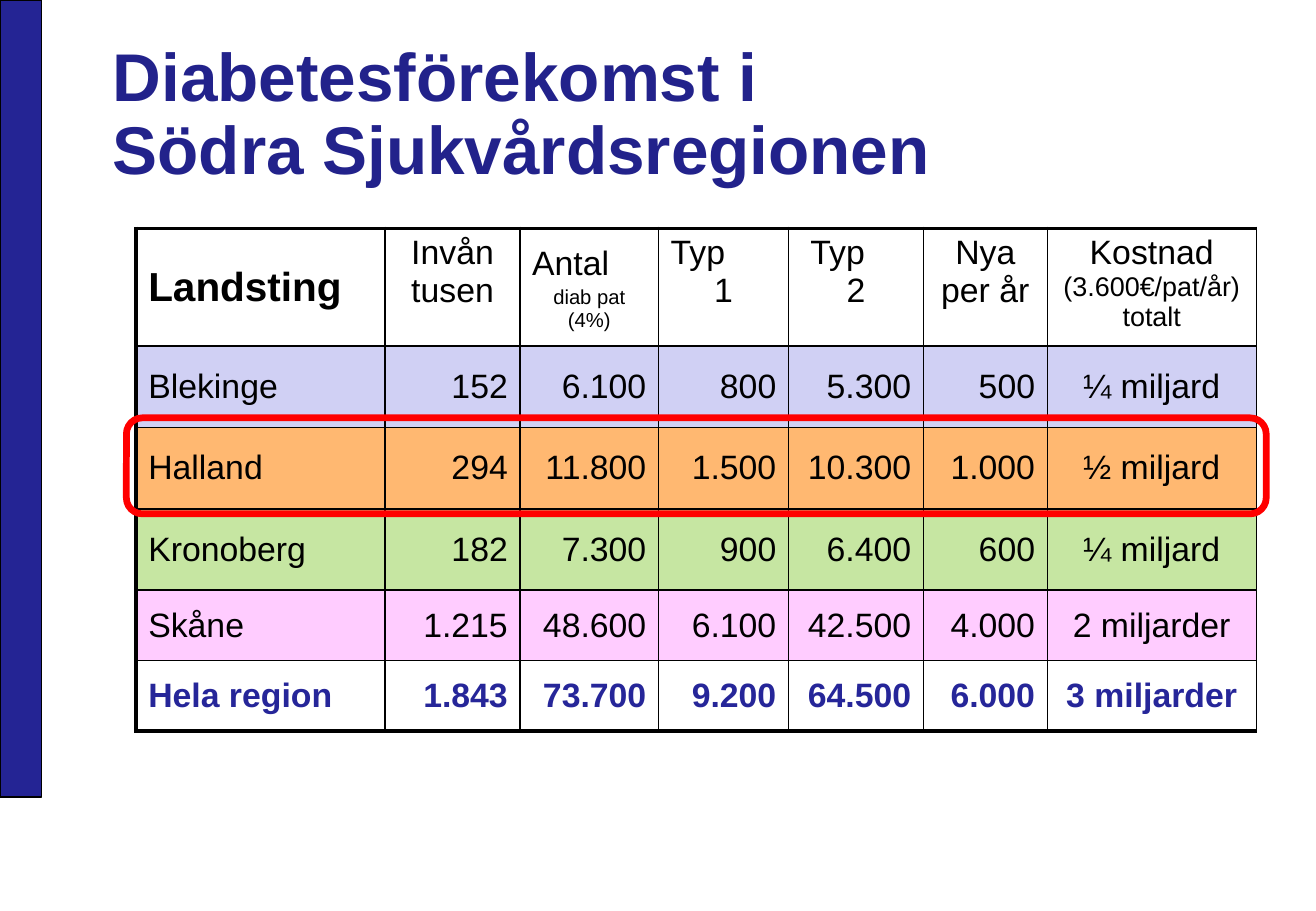
import pptx
import pptx.util
import pptx.dml.color
import pptx.enum.shapes
import pptx.enum.text
import pptx.oxml
import pptx.oxml.ns

In, Pt = pptx.util.Inches, pptx.util.Pt
RGB = pptx.dml.color.RGBColor
SHAPE = pptx.enum.shapes.MSO_SHAPE
ANCHOR = pptx.enum.text.MSO_ANCHOR
ALIGN = pptx.enum.text.PP_ALIGN
LEFT, CENTER, RIGHT = ALIGN.LEFT, ALIGN.CENTER, ALIGN.RIGHT

BLACK = RGB(0x00, 0x00, 0x00)
RED = RGB(0xFF, 0x00, 0x00)
BAR = RGB(0x24, 0x24, 0x94)
TITLE = RGB(0x22, 0x22, 0x8B)
TOTAL = RGB(0x26, 0x26, 0x99)
LILAC = RGB(0xD0, 0xD0, 0xF4)
ORANGE = RGB(0xFF, 0xB8, 0x71)
GREEN = RGB(0xC6, 0xE6, 0xA2)
PINK = RGB(0xFF, 0xCC, 0xFF)
W, H = 10.83, 7.5


def add_run(p, text, size, color=BLACK, bold=False):
    r = p.add_run()
    r.text = text
    r.font.color.rgb = color
    for name, value in dict(name="Arial", size=Pt(size), bold=bold).items():
        setattr(r.font, name, value)


def add_borders(cell, widths):
    tc_pr = cell._tc.get_or_add_tcPr()
    for side, width in zip("LRTB", widths):
        tc_pr.append(pptx.oxml.parse_xml(
            f'<a:ln{side} {pptx.oxml.ns.nsdecls("a")} w="{Pt(width)}">'
            f'<a:solidFill><a:srgbClr val="{BLACK}"/></a:solidFill></a:ln{side}>'))


prs = pptx.Presentation()
prs.slide_width, prs.slide_height = In(W), In(H)
s = prs.slides.add_slide(prs.slide_layouts[6])

# Side bar
sp = s.shapes.add_shape(SHAPE.RECTANGLE, 0, 0, In(0.34), In(H * 7 / 8))
sp.shadow.inherit = False
sp.fill.solid()
sp.fill.fore_color.rgb = BAR
sp.line.color.rgb = BLACK
sp.line.width = Pt(0.75)

# Title
tf = s.shapes.add_textbox(In(0.83), In(0.33), In(W * 0.85), In(H / 6)).text_frame
tf.word_wrap = True
tf.vertical_anchor = ANCHOR.MIDDLE
p = tf.paragraphs[0]
p.line_spacing = 0.9
add_run(p, "Diabetesförekomst i", 40, TITLE, True)
p.add_line_break()
add_run(p, "Södra Sjukvårdsregionen", 40, TITLE, True)

# Table grid
cols = [2.05, 1.11, 1.14, 1.07, 1.11, 1.02, 1.72]
rows = [0.97, 0.67, 0.67, 0.67, 0.58, 0.58]
left, top = 1.12, 1.88
table = s.shapes.add_table(len(rows), len(cols), In(left), In(top),
                           In(sum(cols)), In(sum(rows))).table
table.first_row = table.horz_banding = False
for column, width in zip(table.columns, cols):
    column.width = In(width)
for row, height in zip(table.rows, rows):
    row.height = In(height)

# Header: each cell holds paragraphs of (alignment, runs of text and size)
header = [
    [(LEFT, [("Landsting", 24)])],
    [(CENTER, [("Invån tusen", 20)])],
    [(LEFT, [("Antal", 20)]), (CENTER, [("diab pat (4%)", 12)])],
    [(LEFT, [("Typ", 20)]), (CENTER, [("1", 20)])],
    [(LEFT, [("Typ", 20)]), (CENTER, [("2", 20)])],
    [(CENTER, [("Nya per år", 20)])],
    [(CENTER, [("Kostnad ", 20), ("(3.600€/pat/år) totalt", 16)])],
]
body = [
    (LILAC, ["Blekinge", "152", "6.100", "800", "5.300", "500", "¼ miljard"]),
    (ORANGE, ["Halland", "294", "11.800", "1.500", "10.300", "1.000", "½ miljard"]),
    (GREEN, ["Kronoberg", "182", "7.300", "900", "6.400", "600", "¼ miljard"]),
    (PINK, ["Skåne", "1.215", "48.600", "6.100", "42.500", "4.000", "2 miljarder"]),
    (None, ["Hela region", "1.843", "73.700", "9.200", "64.500", "6.000", "3 miljarder"]),
]
aligns = [LEFT] + [RIGHT] * 5 + [CENTER]
grid = [(None, header)] + [
    (fill, [[(a, [(text, 20)])] for a, text in zip(aligns, texts)])
    for fill, texts in body]

# Cells: thick outer edge on the left, top and bottom
last = len(rows) - 1
for i, (fill, cells) in enumerate(grid):
    for j, paragraphs in enumerate(cells):
        cell = table.cell(i, j)
        add_borders(cell, [2.25 if j == 0 else 1, 1,
                           2.25 if i == 0 else 1, 2.25 if i == last else 1])
        if fill is None:
            cell.fill.background()
        else:
            cell.fill.solid()
            cell.fill.fore_color.rgb = fill
        middle = i > 0 or j == 0
        cell.vertical_anchor = ANCHOR.MIDDLE if middle else ANCHOR.TOP
        cell.margin_left = cell.margin_right = In(0.1)
        cell.margin_top = cell.margin_bottom = In(0.05)
        for k, (align, runs) in enumerate(paragraphs):
            p = cell.text_frame.paragraphs[0] if k == 0 else cell.text_frame.add_paragraph()
            p.alignment = align
            for text, size in runs:
                add_run(p, text, size, TOTAL if i == last else BLACK,
                        i == last or (i, j) == (0, 0))

# "Antal" sits lower than the other headings, "Typ 2" further in
antal, typ2 = table.cell(0, 2), table.cell(0, 4)
antal.margin_top = In(0.14)
antal.text_frame.paragraphs[1].space_before = Pt(2)
typ2.text_frame.paragraphs[0]._p.get_or_add_pPr().set("marL", str(In(0.08)))

# Frame around the Halland row
pad = 0.08
sp = s.shapes.add_shape(SHAPE.ROUNDED_RECTANGLE, In(left - pad), In(top + sum(rows[:2]) - pad),
                        In(sum(cols) + 2 * pad), In(rows[2] + 1.5 * pad))
sp.shadow.inherit = False
sp.fill.background()
sp.line.color.rgb = RED
sp.line.width = Pt(4)

prs.save("out.pptx")
